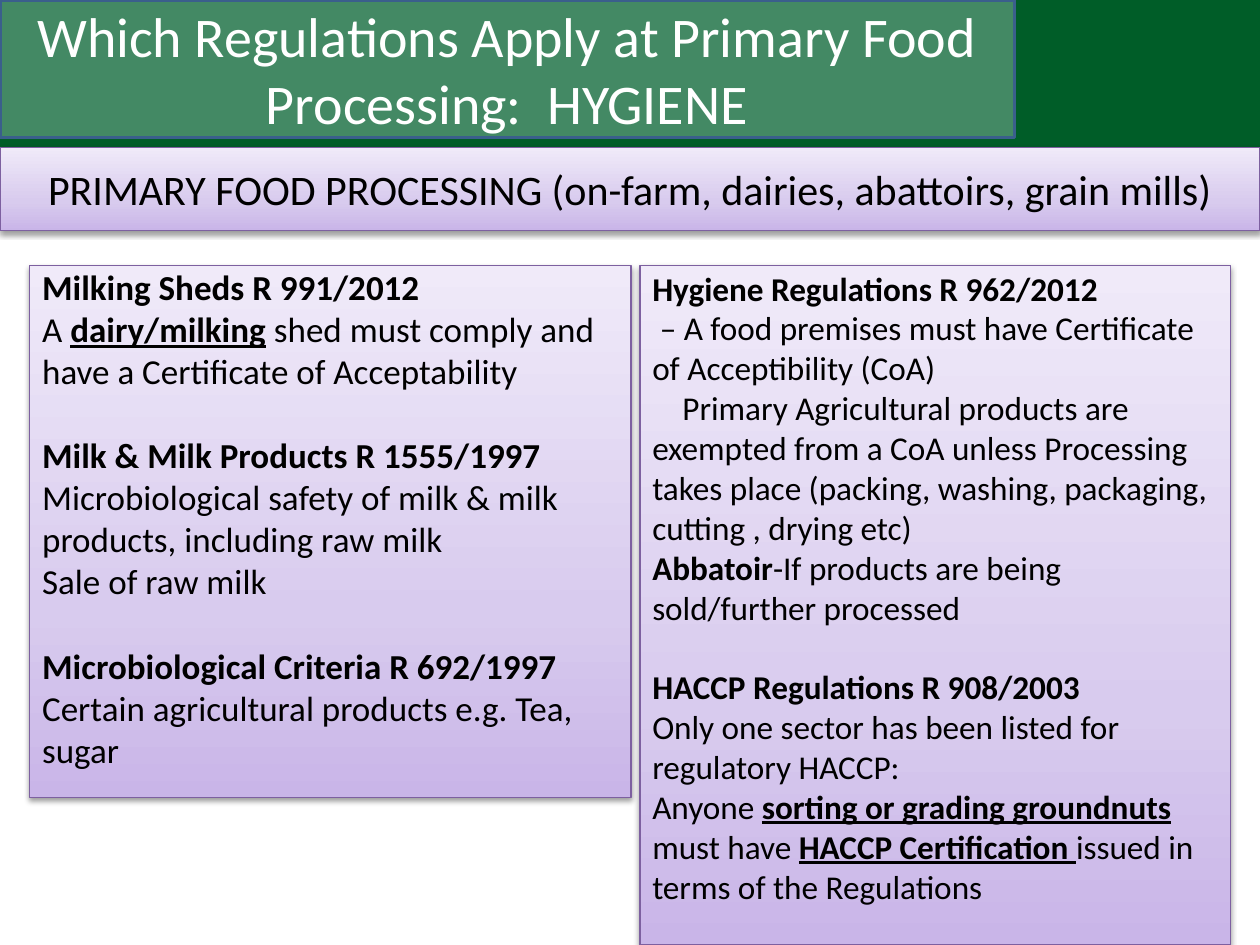
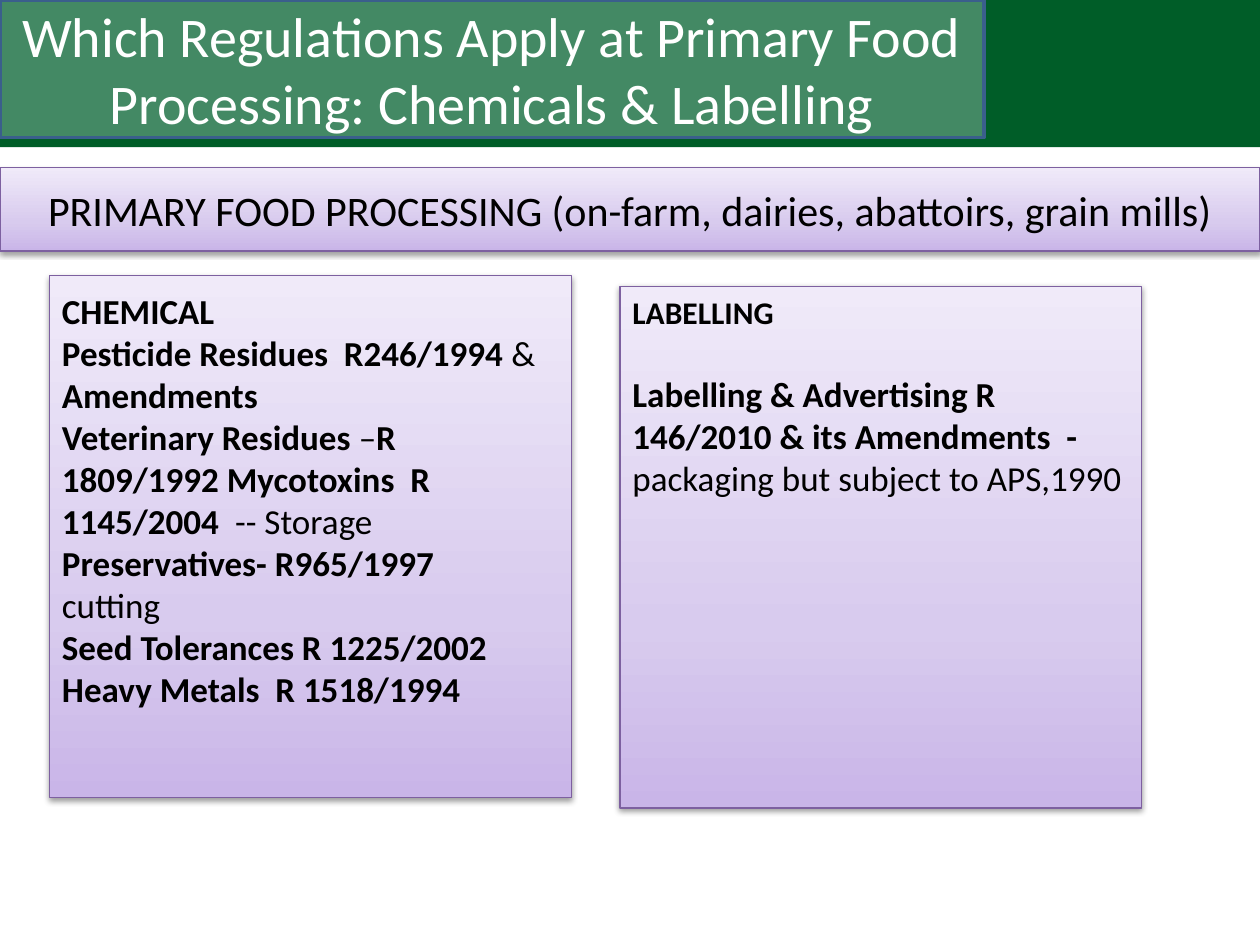
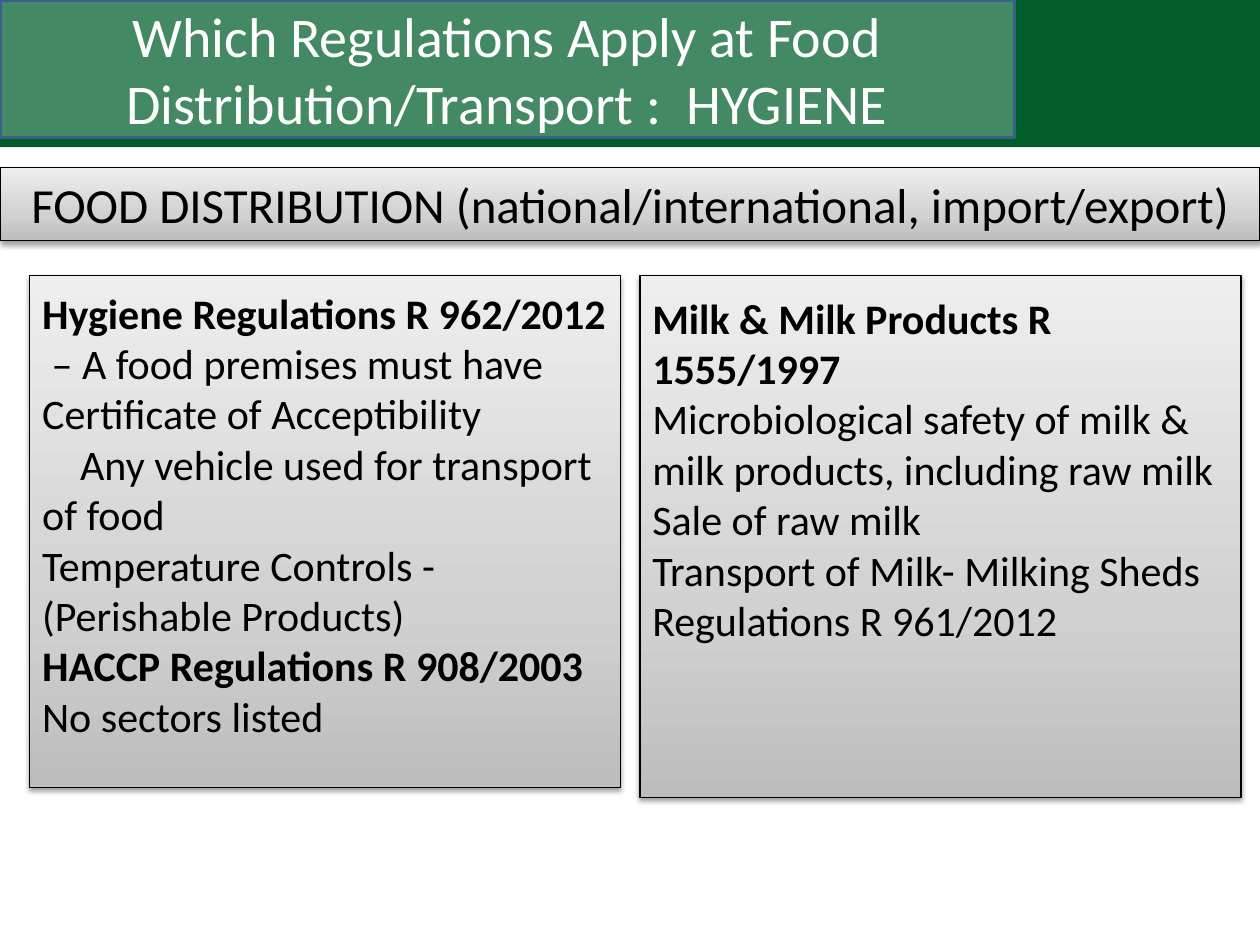
"""Build three slides on the food regulations that apply to processing and distribution."""
from copy import deepcopy
from typing import NamedTuple

from lxml import etree
from pptx import Presentation
from pptx.dml.color import RGBColor
from pptx.enum.shapes import MSO_SHAPE
from pptx.enum.text import MSO_ANCHOR, MSO_AUTO_SIZE, PP_ALIGN
from pptx.oxml.ns import qn
from pptx.util import Cm, Pt

RECTANGLE = MSO_SHAPE.RECTANGLE
TOP, MIDDLE = MSO_ANCHOR.TOP, MSO_ANCHOR.MIDDLE
NO_FIT = MSO_AUTO_SIZE.NONE
LEFT, CENTER = PP_ALIGN.LEFT, PP_ALIGN.CENTER

FONT = "Calibri"
WHITE = RGBColor(0xFF, 0xFF, 0xFF)
BLACK = RGBColor(0x00, 0x00, 0x00)
DARK_GREEN = RGBColor(0x00, 0x5D, 0x28)
TITLE_GREEN = RGBColor(0x43, 0x89, 0x64)
TITLE_EDGE = RGBColor(0x3A, 0x5F, 0x8C)
PURPLE_EDGE = RGBColor(0x7D, 0x60, 0xA0)
PURPLES = (RGBColor(0xC9, 0xB5, 0xE8), RGBColor(0xD8, 0xCB, 0xEE), RGBColor(0xF0, 0xEA, 0xF9))
GREYS = (RGBColor(0xBD, 0xBD, 0xBD), RGBColor(0xD1, 0xD1, 0xD1), RGBColor(0xEE, 0xEE, 0xEE))
STOP_POSITIONS = (0, 0.35, 1)

PAGE_WIDTH, PAGE_HEIGHT = 25.4, 19.05
TITLE_ONLY = 5
SPACE_WIDTH = 0.008
LINE_HEIGHT = 1.2


class Theme(NamedTuple):
    """Gradient colours from bottom to top, and the outline colour."""
    gradient: tuple
    edge: RGBColor


class Line(NamedTuple):
    """Spans of (text, style); style holds b for bold and u for underline."""
    spans: list
    gap: bool = False
    indent: int = 0


PURPLE = Theme(PURPLES, PURPLE_EDGE)
GREY = Theme(GREYS, BLACK)


def bold(text, gap=False):
    """Return a line that is wholly bold."""
    return Line([(text, "b")], gap)


def plain(text, indent=0):
    """Return a regular line, its first row indented by a number of spaces."""
    return Line([(text, "")], indent=indent)


def set_font(font, size, color):
    """Apply the deck's typeface with a size and colour."""
    font.name, font.size = FONT, Pt(size)
    font.color.rgb = color


def add_header_band(page):
    """Draw the green band and move it to the layout, behind everything."""
    band = page.shapes.add_shape(RECTANGLE, 0, 0, Cm(PAGE_WIDTH), Cm(2.97))
    band.shadow.inherit = False
    band.fill.solid()
    band.fill.fore_color.rgb = DARK_GREEN
    band.line.fill.background()
    page.slide_layout.shapes._spTree.insert(2, band._element)


def add_page(deck, title, title_width):
    """Add a slide whose title sits in a rounded green box."""
    page = deck.slides.add_slide(deck.slide_layouts[TITLE_ONLY])
    box = page.shapes.title
    box.left, box.top, box.width, box.height = 0, 0, Cm(title_width), Cm(2.77)
    geometry = etree.Element(qn("a:prstGeom"), prst="roundRect")
    etree.SubElement(geometry, qn("a:avLst"))
    box._element.spPr.find(qn("a:xfrm")).addnext(geometry)
    box.fill.solid()
    box.fill.fore_color.rgb = TITLE_GREEN
    box.line.color.rgb = TITLE_EDGE
    box.line.width = Pt(2)
    frame = box.text_frame
    frame.text = title
    frame.auto_size, frame.vertical_anchor = NO_FIT, MIDDLE
    para = frame.paragraphs[0]
    para.alignment = CENTER
    set_font(para.font, 32, WHITE)
    return page


def add_shadow(box):
    """Give a shape a soft shadow straight below it."""
    box.shadow.inherit = False
    effects = box._element.spPr.find(qn("a:effectLst"))
    shadow = etree.SubElement(effects, qn("a:outerShdw"), blurRad="40000", dist="20000",
                              dir="5400000", rotWithShape="0")
    color = etree.SubElement(shadow, qn("a:srgbClr"), val=str(BLACK))
    etree.SubElement(color, qn("a:alpha"), val="38000")


def add_gradient_box(page, theme, left, top, width, height):
    """Add a rectangle with the theme's gradient, outline and shadow."""
    box = page.shapes.add_shape(RECTANGLE, Cm(left), Cm(top), Cm(width), Cm(height))
    box.fill.gradient()
    box.fill.gradient_angle = 90
    stops = box._element.spPr.find(".//" + qn("a:gsLst"))
    stops.append(deepcopy(stops[0]))
    for stop, color, position in zip(box.fill.gradient_stops, theme.gradient, STOP_POSITIONS):
        stop.color.rgb, stop.position = color, position
    box.line.color.rgb = theme.edge
    box.line.width = Pt(0.75)
    add_shadow(box)
    return box


def add_banner(page, theme, text, size, top, height):
    """Add the full-width strip that names the stage of the food chain."""
    frame = add_gradient_box(page, theme, 0, top, PAGE_WIDTH, height).text_frame
    frame.text = text
    frame.word_wrap, frame.vertical_anchor = False, MIDDLE
    para = frame.paragraphs[0]
    para.alignment = CENTER
    set_font(para.font, size, BLACK)


def fill_line(para, line, size):
    """Write one line's spans into a paragraph."""
    para.alignment = LEFT
    if line.gap:
        para.space_before = Pt(LINE_HEIGHT * size)
    if line.indent:
        para._p.get_or_add_pPr().set("indent", str(Cm(SPACE_WIDTH * size * line.indent)))
    set_font(para.font, size, BLACK)
    mixed = len(line.spans) > 1
    for text, style in line.spans:
        span = para.add_run()
        span.text = text
        font = span.font if mixed else para.font
        font.bold = "b" in style
        if "u" in style:
            font.underline = True


def add_panel(page, theme, place, inset, size, lines, heading_size=None):
    """Add a box of regulations; the first line may have its own size."""
    frame = add_gradient_box(page, theme, *place).text_frame
    frame.word_wrap, frame.vertical_anchor = True, TOP
    frame.margin_top = Cm(inset)
    for index, line in enumerate(lines):
        para = frame.add_paragraph() if index else frame.paragraphs[0]
        fill_line(para, line, size if index else heading_size or size)


def build_processing_hygiene(deck):
    """Build the slide on hygiene at primary processing."""
    page = add_page(deck, "Which Regulations Apply at Primary Food Processing:  HYGIENE", 20.45)
    add_header_band(page)
    add_panel(page, PURPLE, (0.6, 5.36, 12.12, 10.72), 0, 20, [
        bold("Milking Sheds R 991/2012"),
        Line([("A ", ""), ("dairy/milking", "bu"),
              (" shed must comply and have a Certificate of Acceptability", "")]),
        bold("Milk & Milk Products R 1555/1997", gap=True),
        plain("Microbiological safety of milk & milk products, including raw milk"),
        plain("Sale of raw milk"),
        bold("Microbiological Criteria R 692/1997", gap=True),
        plain("Certain agricultural products e.g. Tea, sugar"),
    ])
    add_panel(page, PURPLE, (12.9, 5.36, 11.91, 13.69), 0.04, 19, [
        bold("Hygiene Regulations R 962/2012"),
        plain("– A food premises must have Certificate of Acceptibility (CoA)", indent=1),
        plain("Primary Agricultural products are exempted from a CoA unless Processing takes "
              "place (packing, washing, packaging, cutting , drying etc)", indent=4),
        Line([("Abbatoir", "b"), ("-If products are being sold/further processed", "")]),
        bold("HACCP Regulations R 908/2003", gap=True),
        plain("Only one sector has been listed for regulatory HACCP:"),
        Line([("Anyone ", ""), ("sorting or grading groundnuts ", "bu"), ("must have ", ""),
              ("HACCP Certification ", "bu"), ("issued in terms of the Regulations", "")]),
    ])
    return page


def build_processing_chemicals(deck):
    """Build the slide on chemicals and labelling at primary processing."""
    page = add_page(deck, "Which Regulations Apply at Primary Food Processing: "
                          "Chemicals & Labelling", 19.84)
    add_panel(page, PURPLE, (1, 5.56, 10.52, 10.52), 0.28, 20, [
        bold("CHEMICAL"),
        Line([("Pesticide Residues  R246/1994 ", "b"), ("& ", ""), ("Amendments", "b")]),
        Line([("Veterinary Residues ", "b"), ("–", ""),
              ("R 1809/1992 Mycotoxins  R 1145/2004  ", "b"), ("-- Storage", "")]),
        bold("Preservatives- R965/1997"),
        plain("cutting"),
        bold("Seed Tolerances R 1225/2002"),
        bold("Heavy Metals  R 1518/1994"),
    ])
    add_panel(page, PURPLE, (12.5, 5.77, 10.52, 10.52), 0.14, 20, [
        bold("LABELLING"),
        Line([("Labelling & Advertising R 146/2010 & its Amendments  - ", "b"),
              ("packaging but subject to APS,1990", "")], gap=True),
    ], heading_size=18)
    return page


def build_distribution_hygiene(deck):
    """Build the slide on hygiene at distribution and transport."""
    page = add_page(deck, "Which Regulations Apply at Food Distribution/Transport :  HYGIENE", 20.45)
    add_panel(page, GREY, (0.6, 5.56, 11.91, 10.31), 0.23, 24, [
        bold("Hygiene Regulations R 962/2012"),
        plain("– A food premises must have Certificate of Acceptibility", indent=1),
        plain("Any vehicle used for transport of food", indent=4),
        plain("Temperature Controls -(Perishable Products)"),
        bold("HACCP Regulations R 908/2003"),
        plain("No sectors listed"),
    ])
    add_panel(page, GREY, (12.9, 5.56, 12.12, 10.52), 0.33, 24, [
        bold("Milk & Milk Products R 1555/1997"),
        plain("Microbiological safety of milk & milk products, including raw milk"),
        plain("Sale of raw milk"),
        plain("Transport of Milk- Milking Sheds Regulations R 961/2012"),
    ])
    return page


def main():
    """Build and save the deck."""
    deck = Presentation()
    deck.slide_width, deck.slide_height = Cm(PAGE_WIDTH), Cm(PAGE_HEIGHT)
    processing = "PRIMARY FOOD PROCESSING (on-farm, dairies, abattoirs, grain mills)"
    distribution = "FOOD DISTRIBUTION (national/international, import/export)"
    add_banner(build_processing_hygiene(deck), PURPLE, processing, 24, 2.97, 1.68)
    add_banner(build_processing_chemicals(deck), PURPLE, processing, 24, 3.38, 1.68)
    add_banner(build_distribution_hygiene(deck), GREY, distribution, 28, 3.38, 1.47)
    deck.save("out.pptx")


if __name__ == "__main__":
    main()
